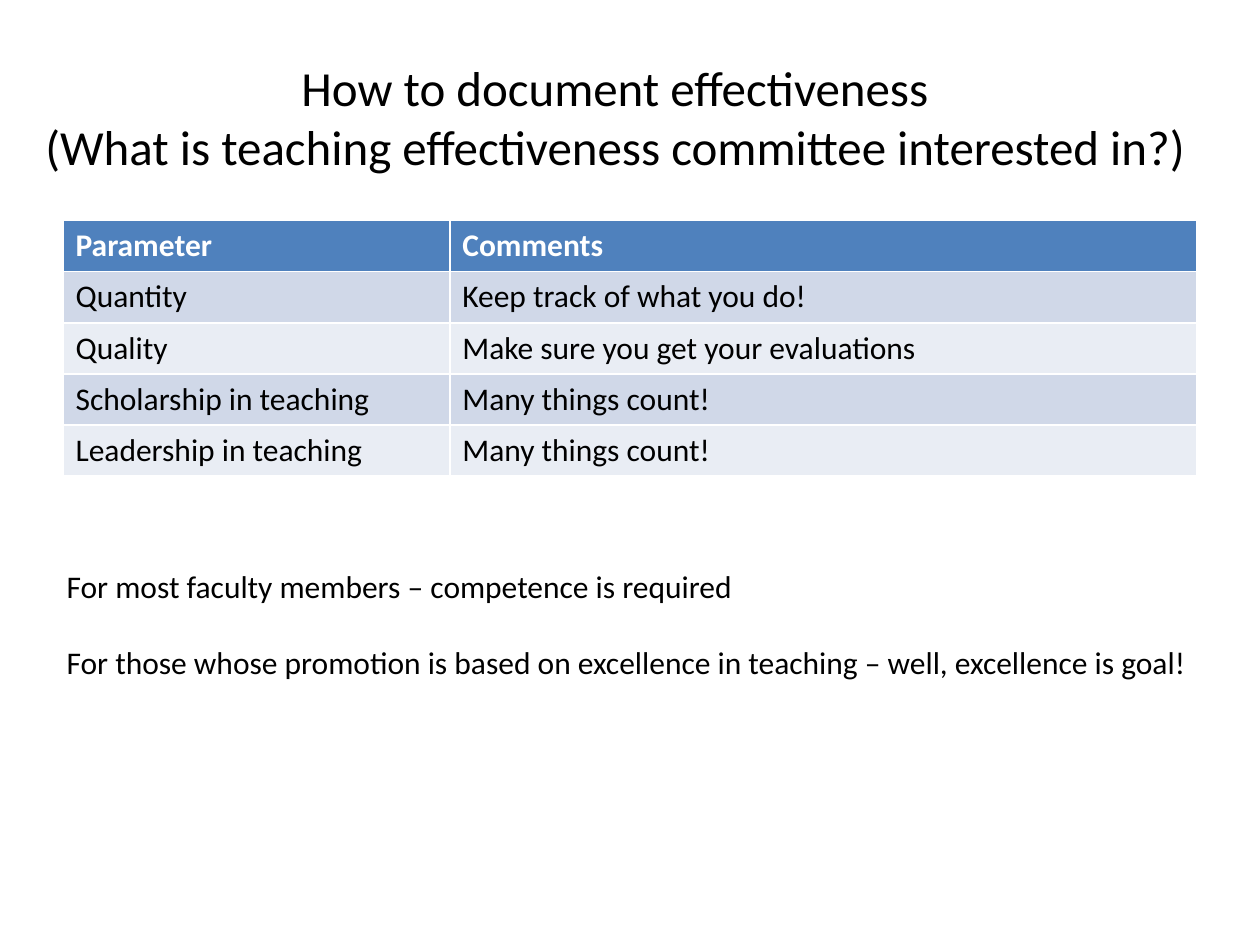
from pptx import Presentation
from pptx.dml.color import RGBColor
from pptx.enum.text import MSO_ANCHOR, MSO_AUTO_SIZE, PP_ALIGN
from pptx.util import Inches, Pt

CENTER, LEFT = PP_ALIGN.CENTER, PP_ALIGN.LEFT
MIDDLE = MSO_ANCHOR.MIDDLE
FIT, FIXED = MSO_AUTO_SIZE.SHAPE_TO_FIT_TEXT, MSO_AUTO_SIZE.NONE
TITLE_ONLY = 5
WIDE, HIGH = 10, 7.5
COLS, ROWS = 100, 75

HEAD = "How to document effectiveness\v(What is teaching effectiveness committee interested in?)"
GRID = [
    ("Parameter", "Comments"),
    ("Quantity", "Keep track of what you do!"),
    ("Quality", "Make sure you get your evaluations"),
    ("Scholarship in teaching", "Many things count!"),
    ("Leadership in teaching", "Many things count!"),
]
NOTES = [
    "For most faculty members – competence is required",
    "For those whose promotion is based on excellence in teaching – well, excellence is goal!",
]


def color(code):
    return RGBColor.from_string(code)


def span(cols):
    return Inches(WIDE * cols / COLS)


def drop(rows):
    return Inches(HIGH * rows / ROWS)


class Deck:
    face, ink, paper = "Calibri", "000000", "FFFFFF"
    accent, bands = "4F81BD", ("E9EDF4", "D0D8E8")
    large, small = 28, 18

    def __init__(self):
        self.show = Presentation()
        self.show.slide_width, self.show.slide_height = Inches(WIDE), Inches(HIGH)
        self.slide = self.show.slides.add_slide(self.show.slide_layouts[TITLE_ONLY])

    def style(self, para, size, ink, bold=False, align=LEFT):
        para.alignment = align
        font = para.font
        font.name, font.size, font.bold = self.face, Pt(size), bold
        font.color.rgb = color(ink)

    def title(self, text, x, y, w, h):
        box = self.slide.shapes.title
        box.left, box.top, box.width, box.height = span(x), drop(y), span(w), drop(h)
        frame = box.text_frame
        frame.text = text
        frame.auto_size, frame.vertical_anchor = FIXED, MIDDLE
        self.style(frame.paragraphs[0], self.large, self.ink, align=CENTER)

    def table(self, data, x, y, widths, h):
        table = self.slide.shapes.add_table(
            len(data), len(widths), span(x), drop(y), span(sum(widths)), drop(h)
        ).table
        for col, width in zip(table.columns, widths):
            col.width = span(width)
        for r, row in enumerate(data):
            first = r == 0
            for c, text in enumerate(row):
                cell = table.cell(r, c)
                cell.text = text
                cell.fill.solid()
                cell.fill.fore_color.rgb = color(self.accent if first else self.bands[r % 2])
                self.style(cell.text_frame.paragraphs[0], self.small,
                           self.paper if first else self.ink, bold=first)

    def text(self, lines, x, y, w, h, gap):
        frame = self.slide.shapes.add_textbox(span(x), drop(y), span(w), drop(h)).text_frame
        frame.word_wrap, frame.auto_size = False, FIT
        frame.text = "\n".join(lines)
        for i, para in enumerate(frame.paragraphs):
            self.style(para, self.small, self.ink)
            para.space_before = Pt(gap if i else 0)


def main():
    deck = Deck()
    # Heading
    deck.title(HEAD, 0, 3, 97.6, 12.5)
    # Parameters and comments
    deck.table(GRID, 5, 17.5, (30.7, 59.3), 20.3)
    # Closing remarks
    deck.text(NOTES, 4.3, 44.5, 91.5, 10.1, gap=21.6)
    deck.show.save("out.pptx")


if __name__ == "__main__":
    main()
